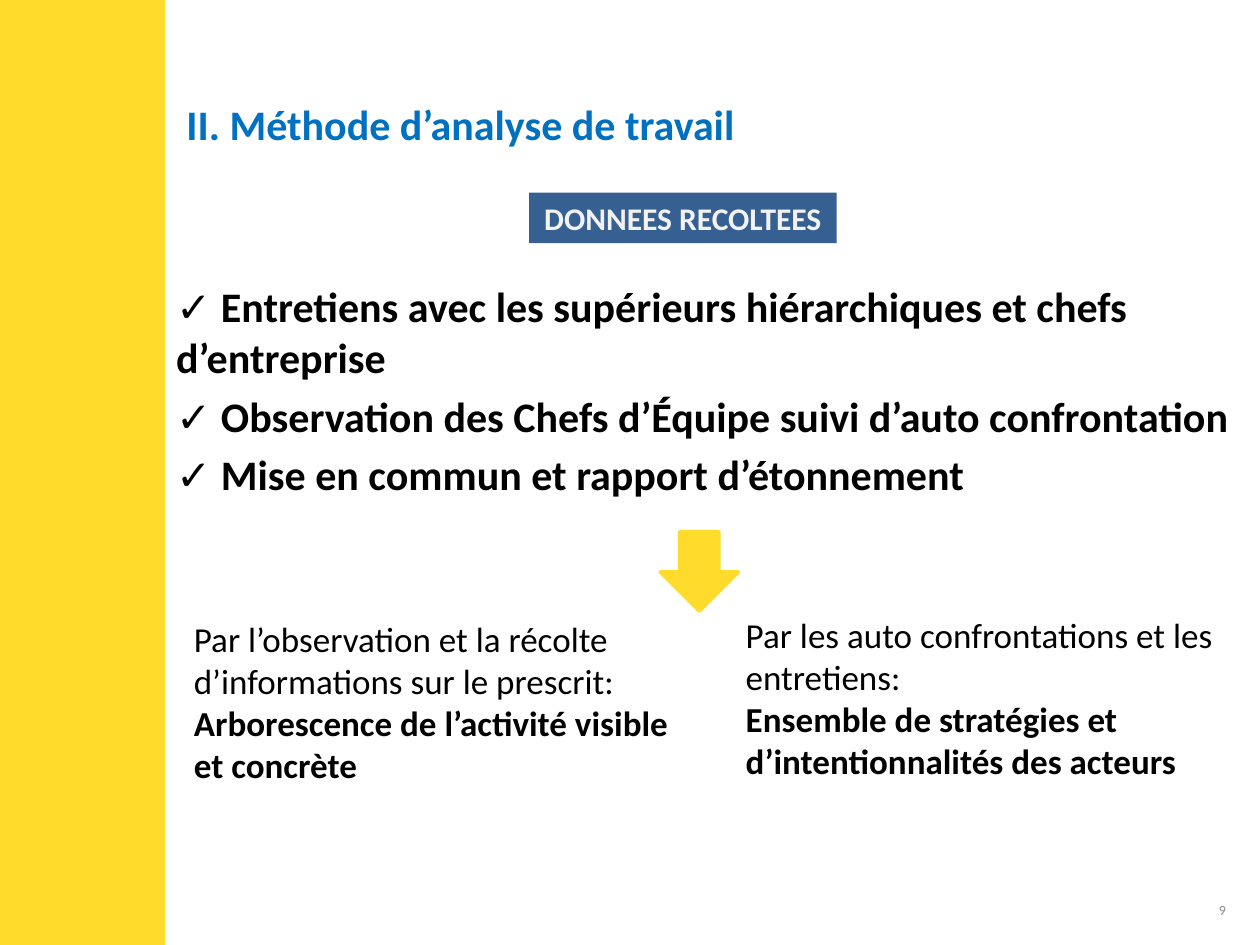
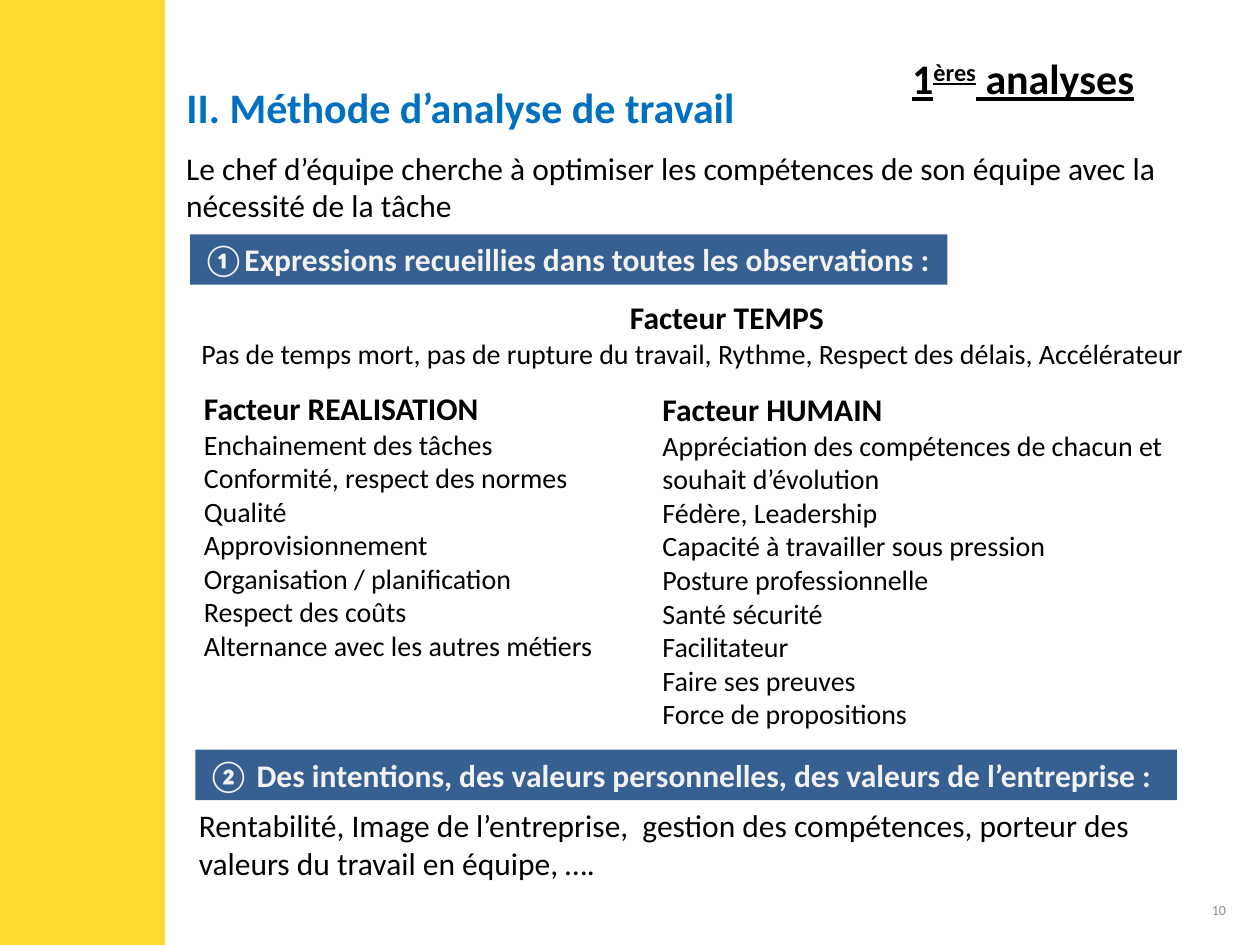
from pptx import Presentation
from pptx.dml.color import RGBColor
from pptx.enum.shapes import MSO_SHAPE as Preset
from pptx.enum.text import MSO_ANCHOR as Anchor, MSO_AUTO_SIZE as AutoSize, PP_ALIGN as Align
from pptx.oxml import parse_xml
from pptx.oxml.ns import nsdecls
from pptx.util import Inches, Pt

YELLOW, NAVY, BLUE = "FFDB2C", "376092", "0070C0"
BLACK, PALE, GREY = "000000", "F2F2F2", "8C8C8C"
FONT = "Calibri"
SECTION = "II. Méthode d’analyse de travail"


def write(shape, lines, color=BLACK, align=Align.LEFT, anchor=Anchor.TOP):
    """Fill a shape with (text, size, bold) lines and return its paragraphs."""
    frame = shape.text_frame
    frame.word_wrap = True
    frame.auto_size = AutoSize.NONE
    frame.vertical_anchor = anchor
    frame.text = "\n".join(text for text, _, _ in lines)
    for paragraph, (_, size, bold) in zip(frame.paragraphs, lines):
        paragraph.alignment = align
        for run in paragraph.runs:
            run.font.name = FONT
            run.font.size = Pt(size)
            run.font.bold = bold
            run.font.color.rgb = RGBColor.from_string(color)
    return frame.paragraphs


def add_block(slide, preset, box, fill, outlined=False):
    """Add a flat preset shape at box (left, top, width, height)."""
    block = slide.shapes.add_shape(preset, *map(Inches, box))
    block.shadow.inherit = False
    block.fill.solid()
    block.fill.fore_color.rgb = RGBColor.from_string(fill)
    if outlined:
        block.line.color.rgb = RGBColor.from_string(fill)
        block.line.width = Pt(2)
    else:
        block.line.fill.background()
    return block


prs = Presentation()
prs.slide_width, prs.slide_height = Inches(10), Inches(7.5)
prs.element.set("firstSlideNum", "9")

# Shared frame: side band, section title, page number
slides = []
for page, title_top in ((9, 0.73), (10, 0.6)):
    slide = prs.slides.add_slide(prs.slide_layouts[5])
    slides.append(slide)
    add_block(slide, Preset.RECTANGLE, (0, 0, 1.3, 7.5), YELLOW, outlined=True)

    title = slide.shapes.title
    title.left, title.top = Inches(1.38), Inches(title_top)
    title.width, title.height = Inches(8.27), Inches(0.5)
    write(title, [(SECTION, 24, True)], BLUE)

    number = slide.shapes.add_textbox(Inches(9.03), Inches(7.02), Inches(0.8), Inches(0.4))
    write(number, [("", 8, False)], align=Align.RIGHT, anchor=Anchor.MIDDLE)
    number.text_frame.paragraphs[0]._p.append(parse_xml(
        f'<a:fld {nsdecls("a")} id="{{B6F15528-21DE-4FAA-801E-634DDDAF4B2B}}" type="slidenum">'
        f'<a:rPr lang="fr-FR" sz="800"><a:solidFill><a:srgbClr val="{GREY}"/></a:solidFill>'
        f'<a:latin typeface="{FONT}"/></a:rPr><a:t>{page}</a:t></a:fld>'))
collected, analyses = slides

# Blue banners
banners = [
    (collected, (4.2, 1.53, 2.44, 0.4), "DONNEES RECOLTEES", Align.CENTER),
    (analyses, (1.51, 1.86, 6.01, 0.4),
     "①Expressions recueillies dans toutes les observations :", Align.LEFT),
    (analyses, (1.55, 5.95, 7.79, 0.4),
     "② Des intentions, des valeurs personnelles, des valeurs de l’entreprise :", Align.LEFT),
]
for slide, box, label, align in banners:
    banner = add_block(slide, Preset.RECTANGLE, box, NAVY)
    write(banner, [(label, 18, True)], PALE, align)

# Slide 9: collected data, then what comes out of it
sources = collected.shapes.add_textbox(Inches(1.3), Inches(2.18), Inches(8.58), Inches(2))
steps = write(sources, [(f"✓ {step}", 24, True) for step in (
    "Entretiens avec les supérieurs hiérarchiques et chefs d’entreprise",
    "Observation des Chefs d’Équipe suivi d’auto confrontation",
    "Mise en commun et rapport d’étonnement")])
for step in steps[1:]:
    step.space_before = Pt(4.8)

add_block(collected, Preset.DOWN_ARROW, (5.24, 4.22, 0.62, 0.63), YELLOW, outlined=True)

outcomes = [
    ((1.44, 4.85, 3.99, 1.45), "Par l’observation et la récolte d’informations sur le prescrit:",
     "Arborescence de l’activité visible et concrète"),
    ((5.82, 4.82, 4.22, 1.45), "Par les auto confrontations et les entretiens:",
     "Ensemble de stratégies et d’intentionnalités des acteurs"),
]
for box, means, result in outcomes:
    outcome = collected.shapes.add_textbox(*map(Inches, box))
    write(outcome, [(means, 20, False), (result, 20, True)])

# Slide 10: corner heading with a superscript
heading = analyses.shapes.add_textbox(Inches(6.24), Inches(0.22), Inches(3.76), Inches(0.79))
first = write(heading, [("1", 24, True)], align=Align.CENTER, anchor=Anchor.MIDDLE)[0]
for wording in ("ères", " analyses"):
    first.add_run().text = wording
for run in first.runs:
    run.font.name, run.font.size = FONT, Pt(24)
    run.font.bold = run.font.underline = True
    run.font.color.rgb = RGBColor.from_string(BLACK)
first.runs[1]._r.get_or_add_rPr().set("baseline", "30000")

# Slide 10: opening and closing statements
statements = [
    ((1.38, 1.13, 8.13, 0.71),
     "Le chef d’équipe cherche à optimiser les compétences de son équipe avec la "
     "nécessité de la tâche"),
    ((1.48, 6.35, 8.16, 0.71),
     "Rentabilité, Image de l’entreprise,  gestion des compétences, porteur des "
     "valeurs du travail en équipe, …."),
]
for box, sentence in statements:
    statement = analyses.shapes.add_textbox(*map(Inches, box))
    write(statement, [(sentence, 18, False)])

# Slide 10: the three factors
factors = [
    ((1.5, 2.32, 8.54, 0.67), "TEMPS", [
        "Pas de temps mort, pas de rupture du travail, Rythme, Respect des délais, Accélérateur"]),
    ((1.52, 3.04, 3.88, 2.29), "REALISATION", [
        "Enchainement des tâches", "Conformité, respect des normes", "Qualité",
        "Approvisionnement", "Organisation / planification", "Respect des coûts",
        "Alternance avec les autres métiers"]),
    ((5.16, 3.05, 4.84, 2.83), "HUMAIN", [
        "Appréciation des compétences de chacun et souhait d’évolution",
        "Fédère, Leadership", "Capacité à travailler sous pression",
        "Posture professionnelle", "Santé sécurité", "Facilitateur",
        "Faire ses preuves", "Force de propositions"]),
]
for box, name, expressions in factors:
    factor = analyses.shapes.add_textbox(*map(Inches, box))
    lines = write(factor, [(f"Facteur {name}", 18, True)]
                  + [(expression, 16, False) for expression in expressions])
    if name == "TEMPS":
        lines[0].alignment = Align.CENTER

prs.save("out.pptx")
